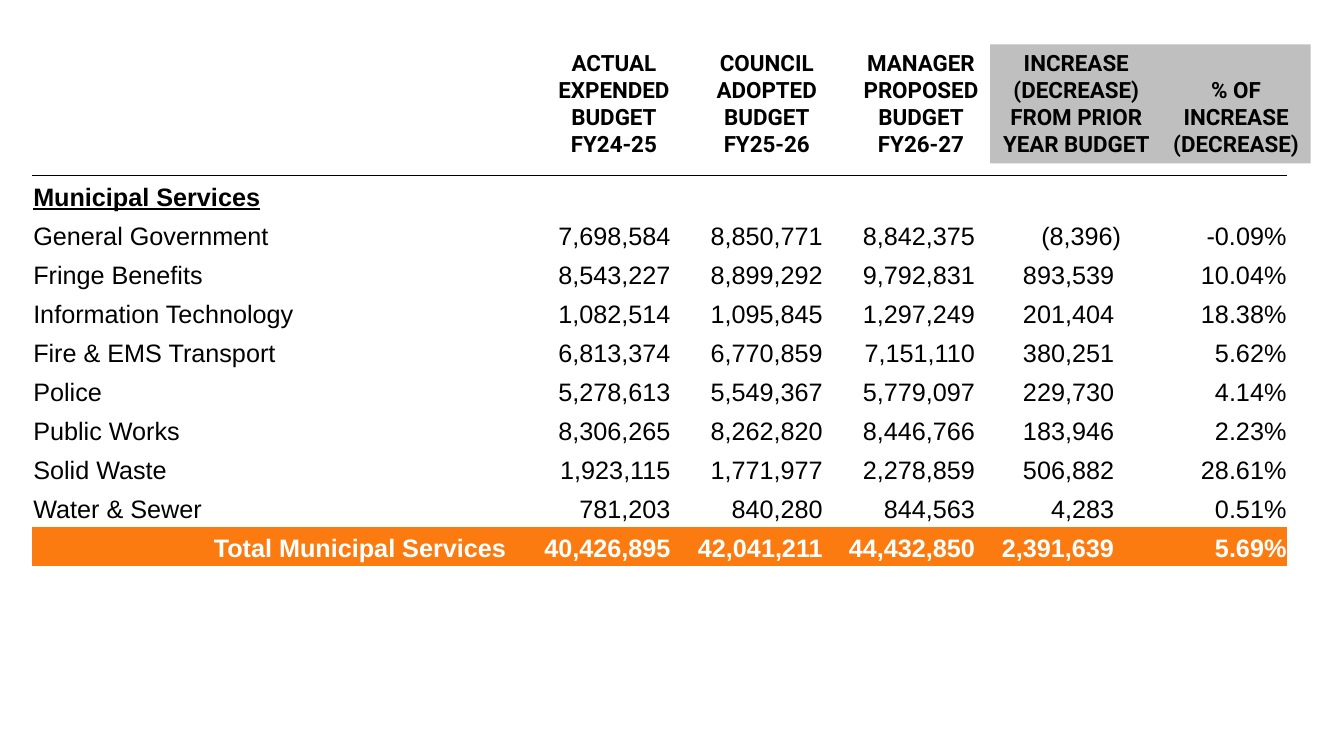
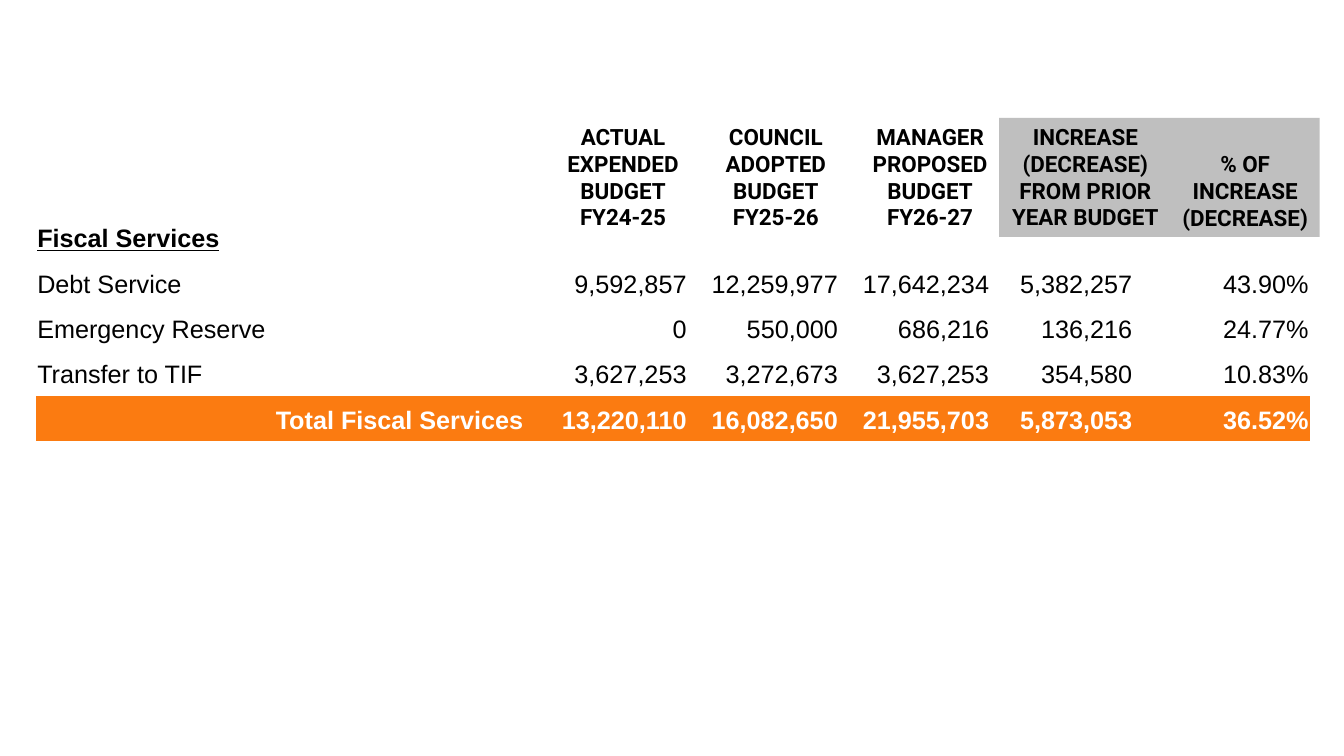
from lxml.etree import SubElement
from pptx import Presentation
from pptx.dml.color import RGBColor
from pptx.enum.shapes import MSO_SHAPE
from pptx.enum.text import MSO_ANCHOR, MSO_AUTO_SIZE, PP_ALIGN
from pptx.oxml.ns import qn
from pptx.util import Inches, Pt

COLORS = {"ink": "000000", "total": "FB7B11", "on_total": "FFFFFF", "change": "BFBFBF"}
PLAIN_TABLE_STYLE = "{2D5ABB26-0587-4C30-8999-92F81FD0307C}"
VALUE_COLUMNS = (0, 2, 3, 4, 5, 7)
HEADER_HEIGHT = 1.18
HEADINGS = [
    (0, 1.36, 1.18, ["ACTUAL\nEXPENDED\nBUDGET", "FY24-25"]),
    (1.57, 1.25, 1.18, ["COUNCIL\nADOPTED\nBUDGET", "FY25-26"]),
    (3.04, 1.37, 1.18, ["MANAGER", "PROPOSED\nBUDGET", "FY26-27"]),
    (4.41, 1.71, 1.18, ["INCREASE", "(DECREASE)", "FROM PRIOR", "YEAR BUDGET"]),
    (6.12, 1.46, 0.91, ["% OF", "INCREASE", "(DECREASE)"]),
]
MUNICIPAL_ROWS = [
    ("General Government", "7,698,584", "8,850,771", "8,842,375", "(8,396)", "-0.09%"),
    ("Fringe Benefits", "8,543,227", "8,899,292", "9,792,831", "893,539", "10.04%"),
    ("Information Technology", "1,082,514", "1,095,845", "1,297,249", "201,404", "18.38%"),
    ("Fire & EMS Transport", "6,813,374", "6,770,859", "7,151,110", "380,251", "5.62%"),
    ("Police", "5,278,613", "5,549,367", "5,779,097", "229,730", "4.14%"),
    ("Public Works", "8,306,265", "8,262,820", "8,446,766", "183,946", "2.23%"),
    ("Solid Waste", "1,923,115", "1,771,977", "2,278,859", "506,882", "28.61%"),
    ("Water & Sewer", "781,203", "840,280", "844,563", "4,283", "0.51%"),
    ("Total Municipal Services", "40,426,895", "42,041,211", "44,432,850", "2,391,639", "5.69%"),
]
FISCAL_ROWS = [
    ("Debt Service", "9,592,857", "12,259,977", "17,642,234", "5,382,257", "43.90%"),
    ("Emergency Reserve", "0", "550,000", "686,216", "136,216", "24.77%"),
    ("Transfer to TIF", "3,627,253", "3,272,673", "3,627,253", "354,580", "10.83%"),
    ("Total Fiscal Services", "13,220,110", "16,082,650", "21,955,703", "5,873,053", "36.52%"),
]


class BudgetDeck:
    def __init__(self):
        self.deck = Presentation()
        self.deck.slide_width = Inches(13.33)
        self.deck.slide_height = Inches(7.5)
        self.page = None

    def add_page(self):
        self.page = self.deck.slides.add_slide(self.deck.slide_layouts[6])

    def add_span(self, para, text, font, size, color="ink", bold=False, underline=False):
        span = para.add_run()
        span.text = text
        span.font.name = font
        span.font.size = Pt(size)
        span.font.bold = bold
        span.font.underline = underline
        span.font.color.rgb = RGBColor.from_string(COLORS[color])

    def add_heading(self, group, left, top, width, height, paragraphs):
        box = group.shapes.add_textbox(Inches(left), Inches(top), Inches(width), Inches(height))
        frame = box.text_frame
        frame.word_wrap = False
        frame.auto_size = MSO_AUTO_SIZE.SHAPE_TO_FIT_TEXT
        for index, text in enumerate(paragraphs):
            para = frame.add_paragraph() if index else frame.paragraphs[0]
            para.alignment = PP_ALIGN.CENTER
            for number, line in enumerate(text.split("\n")):
                if number:
                    para.add_line_break()
                self.add_span(para, line, "Roboto", 16, bold=True)

    def add_header(self, left, top):
        group = self.page.shapes.add_group_shape()
        panel = group.shapes.add_shape(
            MSO_SHAPE.RECTANGLE, Inches(left + 4.41), Inches(top), Inches(3.18), Inches(HEADER_HEIGHT))
        panel.shadow.inherit = False
        panel.fill.solid()
        panel.fill.fore_color.rgb = RGBColor.from_string(COLORS["change"])
        panel.line.fill.background()
        for offset, width, height, paragraphs in HEADINGS:
            self.add_heading(group, left + offset, top + HEADER_HEIGHT - height, width, height, paragraphs)

    def rule_above(self, cell):
        properties = cell._tc.get_or_add_tcPr()
        line = SubElement(properties, qn("a:lnT"), w=str(Pt(1)))
        fill = SubElement(line, qn("a:solidFill"))
        SubElement(fill, qn("a:srgbClr"), val=COLORS["ink"])
        properties.insert(0, line)

    def format_cell(self, cell, is_total, bottom_margin):
        cell.vertical_anchor = MSO_ANCHOR.BOTTOM
        cell.margin_left = cell.margin_top = cell.margin_right = Inches(0.01)
        cell.margin_bottom = Inches(bottom_margin)
        if is_total:
            cell.fill.solid()
            cell.fill.fore_color.rgb = RGBColor.from_string(COLORS["total"])
        else:
            cell.fill.background()

    def fill_row(self, table, row, values, is_total):
        for column, value in zip(VALUE_COLUMNS, values):
            cell = table.cell(row, column)
            para = cell.text_frame.paragraphs[0]
            if column or is_total:
                para.alignment = PP_ALIGN.RIGHT
            if column and value[-1].isdigit():
                cell.margin_right = Inches(0.08)
            color = "on_total" if is_total else "ink"
            self.add_span(para, value, "Arial", 18, color, bold=is_total)

    def add_budget(self, title, rows, area, widths, title_height, bottom_margin, ruled=False):
        left, top, width, height = area
        total_row = len(rows)
        table = self.page.shapes.add_table(
            total_row + 1, len(widths), Inches(left), Inches(top), Inches(width), Inches(height)).table
        table.first_row = table.horz_banding = False
        table._tbl.tblPr.find(qn("a:tableStyleId")).text = PLAIN_TABLE_STYLE
        for column, column_width in zip(table.columns, widths):
            column.width = Inches(column_width)
        for index, row in enumerate(table.rows):
            row.height = Inches((height - title_height) / total_row if index else title_height)
            for cell in row.cells:
                self.format_cell(cell, index == total_row, bottom_margin)
                if ruled and index == 0:
                    self.rule_above(cell)
        for first in (1, 6):
            table.cell(0, first).merge(table.cell(0, first + 1))
        para = table.cell(0, 0).text_frame.paragraphs[0]
        self.add_span(para, title, "Arial", 18, bold=True, underline=True)
        for index, values in enumerate(rows, 1):
            self.fill_row(table, index, values, index == total_row)

    def save(self):
        self.deck.save("out.pptx")


def main():
    budget = BudgetDeck()

    budget.add_page()
    budget.add_budget(
        "Municipal Services", MUNICIPAL_ROWS, (0.32, 1.74, 12.46, 3.88),
        [4.71, 0.19, 1.51, 1.51, 1.51, 1.38, 0.19, 1.45], 0.39, 0.03, ruled=True)
    budget.add_header(5.41, 0.44)

    budget.add_page()
    budget.add_budget(
        "Fiscal Services", FISCAL_ROWS, (0.36, 2.07, 12.62, 2.31),
        [4.84, 0.19, 1.5, 1.5, 1.5, 1.42, 0.19, 1.49], 0.51, 0.07)
    budget.add_header(5.5, 1.17)

    budget.save()


if __name__ == "__main__":
    main()
